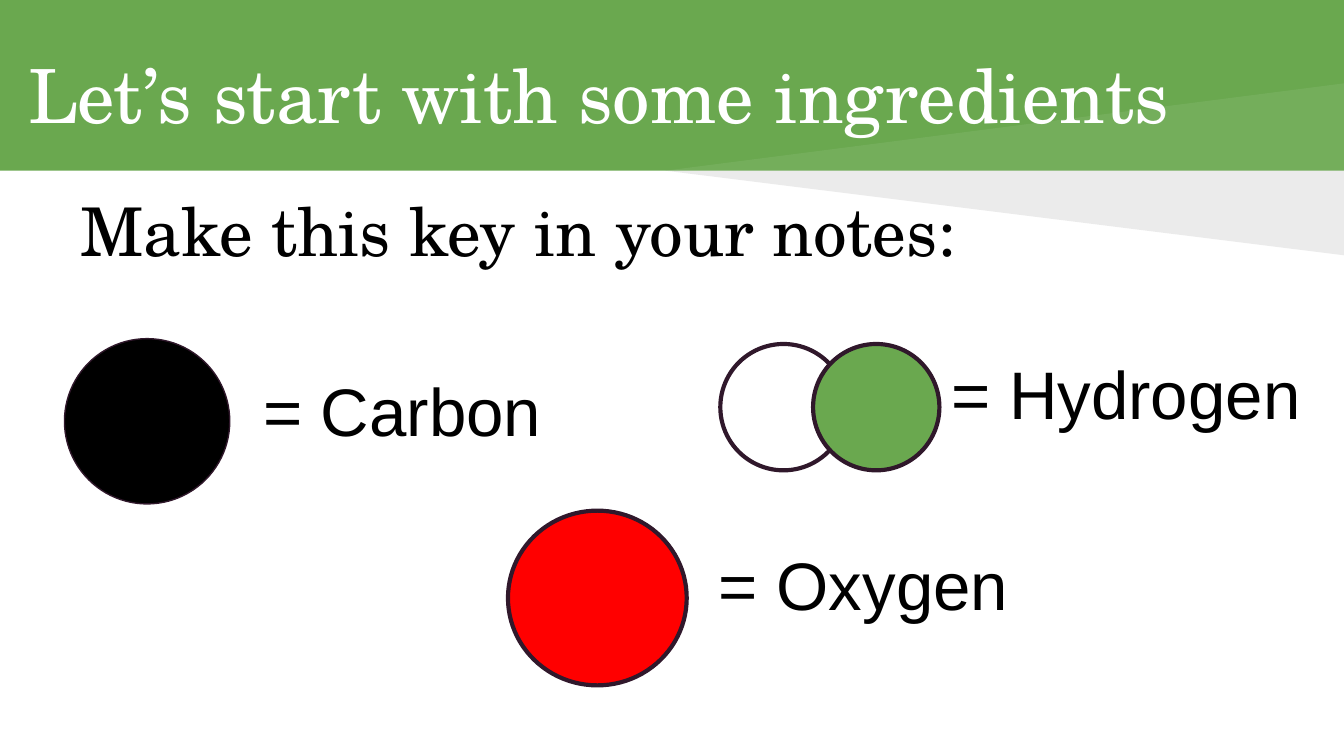
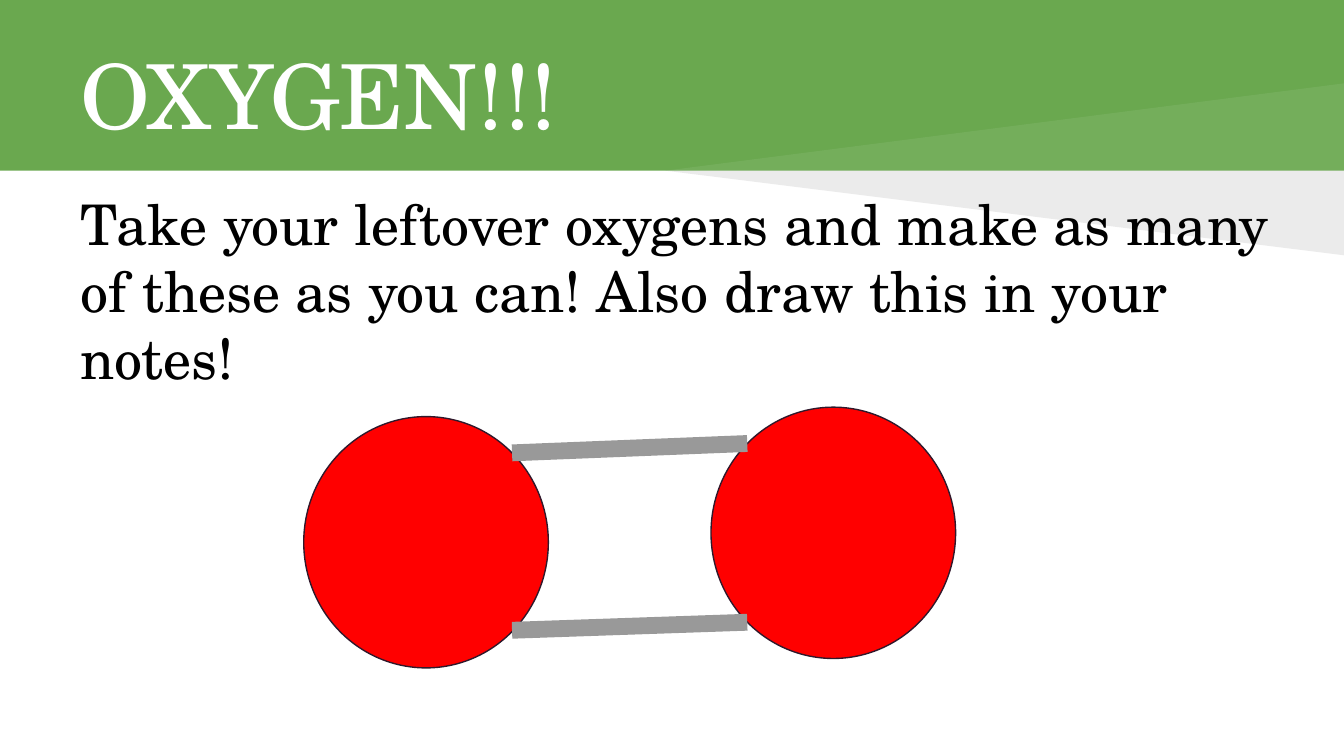
from lxml import etree
from pptx import Presentation
from pptx.dml.color import RGBColor
from pptx.enum.shapes import MSO_CONNECTOR as CONNECTOR, MSO_SHAPE as SHAPE
from pptx.enum.text import MSO_ANCHOR as ANCHOR, MSO_AUTO_SIZE as AUTO_SIZE, PP_ALIGN as ALIGN
from pptx.oxml.ns import qn
from pptx.util import Inches, Pt

GREEN = RGBColor(0x6A, 0xA8, 0x4F)
WHITE = RGBColor(0xFF, 0xFF, 0xFF)
BLACK = RGBColor(0x00, 0x00, 0x00)
RED = RGBColor(0xFF, 0x00, 0x00)
GREY = RGBColor(0x99, 0x99, 0x99)
OUTLINE = RGBColor(0x30, 0x18, 0x2B)

SERIF = "TeX Gyre Schola"
SANS = "Arial"
WIDTH = 10
HEIGHT = WIDTH * 9 / 16
BAND_BOTTOM = 1.27
TITLE_ONLY = 5

FRAME_FORMAT = {
    "word_wrap": True,
    "auto_size": AUTO_SIZE.NONE,
    "margin_left": Inches(0.1),
    "margin_right": Inches(0.1),
    "margin_top": Inches(0.1),
    "margin_bottom": Inches(0.1),
}


def fill_plain(shape, color, alpha=None):
    """Flat fill without line or shadow; alpha is a percentage."""
    shape.shadow.inherit = False
    shape.fill.solid()
    shape.fill.fore_color.rgb = color
    shape.line.fill.background()
    if alpha is not None:
        srgb = shape.element.spPr.find(qn("a:solidFill")).find(qn("a:srgbClr"))
        etree.SubElement(srgb, qn("a:alpha"), val=str(alpha * 1000))


def write(shape, text, size, font, color, anchor=ANCHOR.TOP):
    frame = shape.text_frame
    for name, value in FRAME_FORMAT.items():
        setattr(frame, name, value)
    frame.vertical_anchor = anchor
    paragraph = frame.paragraphs[0]
    paragraph.alignment = ALIGN.LEFT
    run = paragraph.add_run()
    run.text = text
    run.font.name, run.font.size = font, Pt(size)
    run.font.color.rgb = color


def add_text(slide, text, box, size, font):
    label = slide.shapes.add_textbox(*map(Inches, box))
    write(label, text, size, font, BLACK)


def add_wedge(slide, tip_y, color, alpha):
    """Faint triangle opening from the band's edge to the right margin."""
    start = (Inches(WIDTH), Inches(BAND_BOTTOM))
    builder = slide.shapes.build_freeform(*start)
    builder.add_line_segments(
        [(Inches(4.95), Inches(BAND_BOTTOM)), (Inches(WIDTH), Inches(tip_y))])
    fill_plain(builder.convert_to_shape(), color, alpha)


def add_atom(slide, box, color, line_width):
    atom = slide.shapes.add_shape(SHAPE.OVAL, *map(Inches, box))
    fill_plain(atom, color)
    atom.line.color.rgb = OUTLINE
    atom.line.width = Pt(line_width)


def add_bond(slide, start, end):
    bond = slide.shapes.add_connector(
        CONNECTOR.STRAIGHT, *map(Inches, (*start, *end)))
    bond.line.color.rgb = GREY
    bond.line.width = Pt(9)
    etree.SubElement(bond.element.spPr, qn("a:effectLst"))


def add_base_slide(deck, title, title_box, title_size):
    """Green slide with white body, two wedges and a title."""
    slide = deck.slides.add_slide(deck.slide_layouts[TITLE_ONLY])
    slide.background.fill.solid()
    slide.background.fill.fore_color.rgb = GREEN

    body = slide.shapes.add_shape(
        SHAPE.RECTANGLE, 0, Inches(BAND_BOTTOM),
        Inches(WIDTH), Inches(HEIGHT - BAND_BOTTOM))
    fill_plain(body, WHITE)
    add_wedge(slide, 0.62, WHITE, 7)
    add_wedge(slide, 1.9, BLACK, 8)

    # The title goes in front of the bands
    heading = slide.shapes.title
    slide.shapes.element.append(heading.element)
    heading.left, heading.top, heading.width, heading.height = map(Inches, title_box)
    write(heading, title, title_size, SERIF, WHITE, ANCHOR.MIDDLE)
    return slide


def build_key_slide(deck):
    slide = add_base_slide(
        deck, "Let’s start with some ingredients", (0.11, 0.23, 9.75, 0.94), 40)
    add_text(slide, "Make this key in your notes:", (0.5, 1.31, 9, 1.02), 36, SERIF)

    # Atoms of the key
    for box, color, line_width in (
        ((0.48, 2.52, 1.23, 1.23), BLACK, 0.75),
        ((3.78, 3.8, 1.33, 1.3), RED, 2.25),
        ((5.36, 2.56, 0.94, 0.94), WHITE, 2.25),
        ((6.05, 2.56, 0.94, 0.94), GREEN, 2.25),
    ):
        add_atom(slide, box, color, line_width)

    # Element names
    for element, left, top in (
        ("Carbon", 1.86, 2.65), ("Oxygen", 5.25, 3.94), ("Hydrogen", 6.98, 2.52),
    ):
        add_text(slide, f"= {element}", (left, top, 2.85, 1.02), 36, SANS)


def build_oxygen_slide(deck):
    slide = add_base_slide(deck, "OXYGEN!!!", (0.5, 0.23, 9, 0.94), 48)
    add_text(
        slide,
        "Take your leftover oxygens and make as many of these as you can! "
        "Also draw this in your notes!",
        (0.5, 1.31, 9.27, 1.46), 30, SERIF)

    # Oxygen molecule with its double bond
    for left, top in ((2.26, 3.1), (5.29, 3.03)):
        add_atom(slide, (left, top, 1.82, 1.87), RED, 0.75)
    add_bond(slide, (3.81, 3.37), (5.56, 3.3))
    add_bond(slide, (5.56, 4.63), (3.81, 4.69))


def main():
    deck = Presentation()
    deck.slide_width, deck.slide_height = Inches(WIDTH), Inches(HEIGHT)
    build_key_slide(deck)
    build_oxygen_slide(deck)
    deck.save("out.pptx")


if __name__ == "__main__":
    main()
